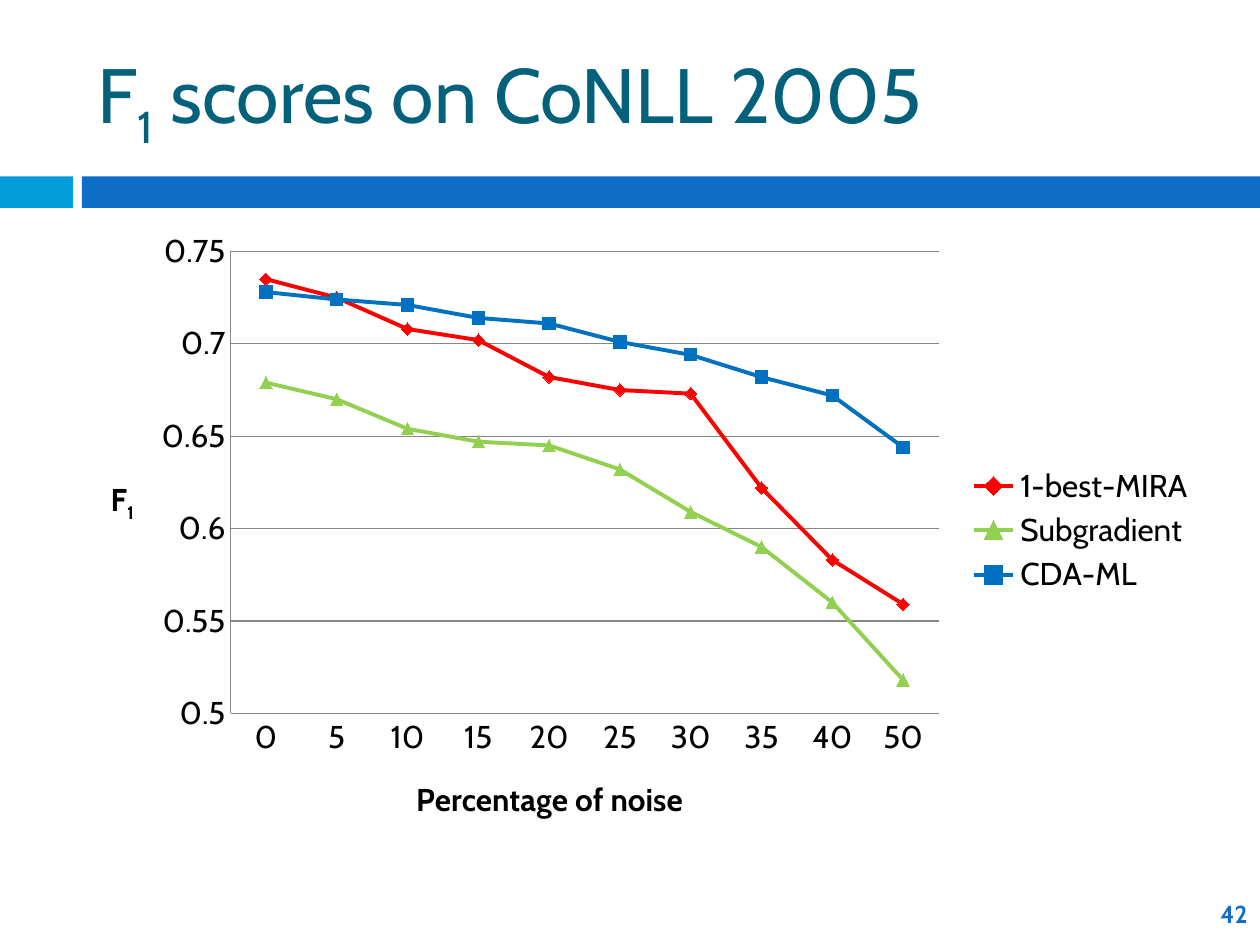
from pptx import Presentation, util as u
from pptx.chart.data import CategoryChartData
from pptx.dml.color import RGBColor
from pptx.enum import chart as ch, shapes, text
from pptx.oxml import parse_xml
from pptx.oxml.ns import nsdecls, qn

TEAL = RGBColor(0x04, 0x61, 0x7B)
CYAN = RGBColor(0x00, 0x9D, 0xD9)
BLUE = RGBColor(0x0F, 0x6F, 0xC6)
BLACK = RGBColor(0, 0, 0)
GREY = RGBColor(0x86, 0x86, 0x86)
RED = RGBColor(0xFF, 0, 0)
GREEN = RGBColor(0x92, 0xD0, 0x50)
AZURE = RGBColor(0, 0x70, 0xC0)

MARK = ch.XL_MARKER_STYLE
NOISE = ["0", "5", "10", "15", "20", "25", "30", "35", "40", "50"]
SCORES = [
    ("1-best-MIRA", RED, MARK.DIAMOND,
     [0.735, 0.725, 0.708, 0.702, 0.682, 0.675, 0.673, 0.622, 0.583, 0.559]),
    ("Subgradient", GREEN, MARK.TRIANGLE,
     [0.679, 0.67, 0.654, 0.647, 0.645, 0.632, 0.609, 0.59, 0.56, 0.518]),
    ("CDA-ML", AZURE, MARK.SQUARE,
     [0.728, 0.724, 0.721, 0.714, 0.711, 0.701, 0.694, 0.682, 0.672, 0.644]),
]


class Deck:
    font = "Cabin"

    def __init__(self, wide, high):
        self.prs = Presentation()
        self.prs.slide_width = u.Inches(wide)
        self.prs.slide_height = u.Inches(high)
        self.slide = self.prs.slides.add_slide(self.prs.slide_layouts[5])

    def box(self, left, top, width, height):
        wide, high = self.prs.slide_width, self.prs.slide_height
        return [round(share * size) for share, size in
                zip((left, top, width, height), (wide, high, wide, high))]

    def style(self, font, size, color, bold=False):
        font.name, font.size, font.bold = self.font, u.Pt(size), bold
        font.color.rgb = color

    def runs(self, para, parts, size, color, bold=False):
        for words, base in parts:
            run = para.add_run()
            run.text = words
            self.style(run.font, size, color, bold)
            if base:
                run.font._element.set("baseline", str(base * 1000))

    def title(self, area, parts):
        shape = self.slide.shapes.title
        shape.left, shape.top, shape.width, shape.height = self.box(*area)
        frame = shape.text_frame
        frame.vertical_anchor = text.MSO_ANCHOR.MIDDLE
        para = frame.paragraphs[0]
        para.alignment = text.PP_ALIGN.LEFT
        self.runs(para, parts, 44, TEAL)

    def bar(self, area, color):
        shape = self.slide.shapes.add_shape(
            shapes.MSO_SHAPE.RECTANGLE, *self.box(*area))
        shape.shadow.inherit = False
        shape.fill.solid()
        shape.fill.fore_color.rgb = color
        shape.line.fill.background()

    def label(self, area, words):
        frame = self.slide.shapes.add_textbox(*self.box(*area)).text_frame
        frame.word_wrap = True
        frame.vertical_anchor = text.MSO_ANCHOR.MIDDLE
        para = frame.paragraphs[0]
        para.alignment = text.PP_ALIGN.RIGHT
        self.runs(para, [(words, 0)], 14, BLUE, True)

    def place(self, node, index, **spots):
        for old in node.findall(qn("c:layout")):
            node.remove(old)
        modes = "".join(f'<c:{key}Mode val="edge"/>' for key in "xy")
        sizes = "".join(f'<c:{key} val="{val}"/>' for key, val in spots.items())
        inner = '<c:layoutTarget val="inner"/>' if "w" in spots else ""
        node.insert(index, parse_xml(
            f'<c:layout {nsdecls("c")}><c:manualLayout>{inner}{modes}{sizes}'
            '</c:manualLayout></c:layout>'))

    def axis(self, axis, parts, x, y):
        axis.major_tick_mark = axis.minor_tick_mark = ch.XL_TICK_MARK.NONE
        axis.format.line.color.rgb = GREY
        self.style(axis.tick_labels.font, 18, BLACK)
        frame = axis.axis_title.text_frame
        frame._txBody.bodyPr.set("rot", "0")
        frame._txBody.bodyPr.set("vert", "horz")
        self.runs(frame.paragraphs[0], parts, 18, BLACK, True)
        self.place(axis.axis_title._element, 1, x=x, y=y)

    def chart(self, area, names, rows):
        data = CategoryChartData()
        data.categories = names
        for name, _, _, vals in rows:
            data.add_series(name, vals)
        chart = self.slide.shapes.add_chart(
            ch.XL_CHART_TYPE.LINE_MARKERS, *self.box(*area), data).chart
        self.style(chart.font, 18, BLACK)
        chart.has_title = False
        chart.has_legend = True
        chart.legend.position = ch.XL_LEGEND_POSITION.RIGHT
        chart.legend.include_in_layout = False
        self.style(chart.legend.font, 18, BLACK)
        plot = chart.plots[0]
        plot.vary_by_categories = False
        for line, (_, color, mark, _) in zip(plot.series, rows):
            line.smooth = False
            line.format.line.color.rgb = color
            line.format.line.width = u.Pt(2.25)
            line.marker.style, line.marker.size = mark, 7
            line.marker.format.fill.solid()
            line.marker.format.fill.fore_color.rgb = color
            line.marker.format.line.color.rgb = color
        self.axis(chart.category_axis, [("Percentage of noise", 0)], 0.29, 0.89)
        value = chart.value_axis
        self.axis(value, [("F", 0), ("1", -25)], 0.02, 0.41)
        value.minimum_scale, value.maximum_scale = 0.5, 0.75
        value.major_unit = 0.05
        value.has_major_gridlines = True
        value.major_gridlines.format.line.color.rgb = GREY
        self.place(chart._chartSpace.chart.plotArea, 0,
                   x=0.13, y=0.05, w=0.63, h=0.745)


def main():
    deck = Deck(10, 7.5)
    left, wide = 0.067, 0.892
    band, deep = 1.4 / 7.5, 0.25 / 7.5
    deck.bar((0, band, 0.058, deep), CYAN)
    deck.bar((0.065, band, 0.935, deep), BLUE)
    deck.title((left, 0.25 / 7.5, wide, 1.08 / 7.5),
               [("F", 0), ("1", -25), (" scores on CoNLL 2005", 0)])
    deck.label((0.95, 7 / 7.5, 0.05, 0.5 / 7.5), "42")
    deck.chart((left, 1.75 / 7.5, wide, 4.92 / 7.5), NOISE, SCORES)
    deck.prs.save("out.pptx")


if __name__ == "__main__":
    main()
